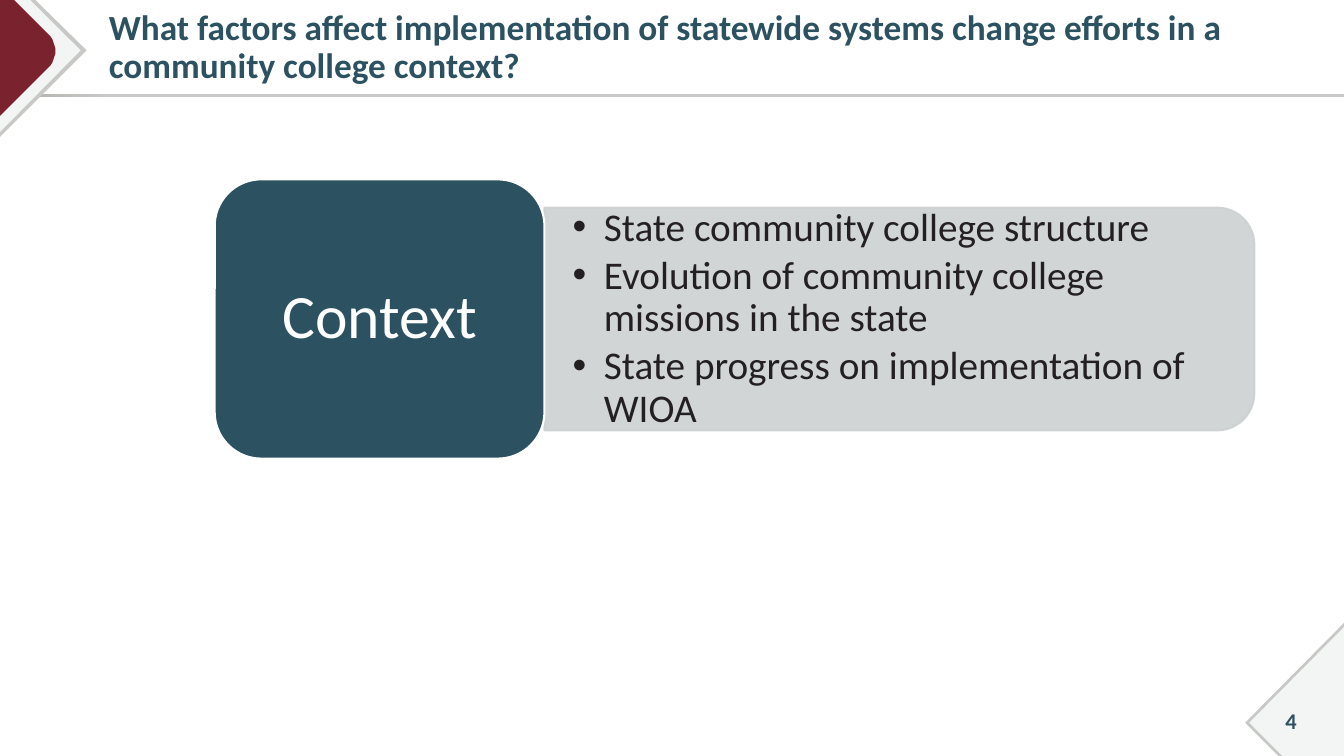
from lxml import etree
from pptx import Presentation
from pptx import util as u
from pptx.dml.color import RGBColor
from pptx.enum import shapes, text
from pptx.oxml import ns

PX = 9144  # EMU per px, 100 px to the inch
SLIDE_W, SLIDE_H = 1333, 750
FONT = "Calibri"
COLORS = {
    "teal": "2C5261", "maroon": "7A232F", "edge": "C8C8C6", "edge_dark": "ABABA8",
    "pale": "F3F4F4", "panel": "CDD1D2", "ink": "242021", "white": "FFFFFF",
}
TITLE = ("What factors affect implementation of statewide systems change "
         "efforts in a community college context?")
FACTORS = [
    "State community college structure",
    "Evolution of community college missions in the state",
    "State progress on implementation of WIOA",
]


def rgb(name):
    return RGBColor.from_string(COLORS[name])


def px(*lengths):
    return [u.Emu(round(length * PX)) for length in lengths]


def place(shape, box):
    shape.left, shape.top, shape.width, shape.height = px(*box)


def paint(shape, fill, line=None):
    shape.shadow.inherit = False
    shape.fill.solid()
    shape.fill.fore_color.rgb = rgb(fill)
    if line:
        shape.line.color.rgb = rgb(line)
        shape.line.width = u.Pt(1.5)
    else:
        shape.line.fill.background()


def set_alpha(shape, percent):
    for color in shape.element.spPr.iter(ns.qn("a:srgbClr")):
        etree.SubElement(color, ns.qn("a:alpha"), val=str(percent * 1000))


def write(shape, paragraphs, size, color, bold=False, align=text.PP_ALIGN.LEFT,
          margins=(10, 5, 10, 5), spacing=0.9, after=0, hang=0):
    """Fill a shape with text; a hang in px turns the paragraphs into bullets."""
    frame = shape.text_frame
    frame.word_wrap = True
    frame.auto_size = text.MSO_AUTO_SIZE.NONE
    frame.vertical_anchor = text.MSO_ANCHOR.MIDDLE
    (frame.margin_left, frame.margin_top,
     frame.margin_right, frame.margin_bottom) = px(*margins)
    frame.text = "\n".join(paragraphs)
    for paragraph in frame.paragraphs:
        paragraph.alignment = align
        paragraph.line_spacing = spacing
        paragraph.space_before = u.Pt(0)
        paragraph.space_after = u.Pt(after)
        if hang:
            properties = paragraph.runs[0].font and paragraph._p.get_or_add_pPr()
            properties.set("marL", str(hang * PX))
            properties.set("indent", str(-hang * PX))
            etree.SubElement(properties, ns.qn("a:buChar"), char="•")
        font = paragraph.runs[0].font
        font.name, font.size, font.bold = FONT, u.Pt(size), bold
        font.color.rgb = rgb(color)


def add_outline(slide, points, fill):
    builder = slide.shapes.build_freeform(*points[0], scale=PX)
    builder.add_line_segments(points[1:], close=True)
    paint(builder.convert_to_shape(), fill)


def curve(start, first, second, end, steps=12):
    """Points along a cubic Bézier curve."""
    points = []
    for step in range(steps + 1):
        t = step / steps
        weights = ((1 - t) ** 3, 3 * t * (1 - t) ** 2, 3 * t * t * (1 - t), t ** 3)
        points.append(tuple(sum(w * p[axis] for w, p in zip(weights, (start, first, second, end)))
                            for axis in (0, 1)))
    return points


def add_number_corner(slide, number):
    for tip, top, foot, fill in ((1235, 618, 1268, "edge"), (1239, 622, 1272, "pale")):
        add_outline(slide, [(SLIDE_W, top), (SLIDE_W, SLIDE_H), (foot, SLIDE_H), (tip, 717)], fill)
    label = slide.shapes.add_textbox(*px(1245, 695, 71, 40))
    write(label, [number], 16, "teal", bold=True, align=text.PP_ALIGN.CENTER, spacing=1)


def add_header(slide, box):
    left, top, width, height = box
    rule = slide.shapes.add_shape(shapes.MSO_SHAPE.RECTANGLE, *px(left, top + height - 3, width, 3))
    paint(rule, "edge")
    rule.fill.gradient()
    rule.fill.gradient_angle = 0
    for stop, color, position in zip(rule.fill.gradient_stops, ("edge_dark", "edge"), (0, 0.08)):
        stop.color.rgb = rgb(color)
        stop.position = position

    for shoulder, tip, foot, fill in ((35, 86, 136, "edge"), (30, 80, 131, "pale")):
        add_outline(slide, [(left, top), (left + shoulder, top), (left + tip, top + 50),
                            (left, top + foot)], fill)
    rounded_tip = curve((48, 34), (57, 43), (57, 58), (48, 67))
    gem = [(0, 0), (14, 0), *rounded_tip, (0, 115)]
    add_outline(slide, [(left + x, top + y) for x, y in gem], "maroon")

    title = slide.shapes.title
    place(title, (left + 88, top + 5, 1212, 86))
    write(title, [TITLE], 25.2, "teal", bold=True, margins=(20, 5, 10, 5))


def add_factor_block(slide, box, heading, factors):
    left, top, width, height = box
    tile_width, panel_height = 327, 221
    panel_width = width - tile_width
    middle = top + height / 2
    center = left + tile_width + panel_width / 2
    panel = slide.shapes.add_shape(
        shapes.MSO_SHAPE.ROUND_2_SAME_RECTANGLE,
        *px(center - panel_height / 2, middle - panel_width / 2, panel_height, panel_width))
    panel.rotation = 90
    paint(panel, "panel", line="panel")
    set_alpha(panel, 90)

    body = slide.placeholders[1]
    place(body, (left + tile_width + 1, middle - 100, panel_width - 11, 200))
    slide.shapes.element.append(body.element)  # bring the list in front of its panel
    write(body, factors, 28, "ink", margins=(27, 14, 27, 14), after=4.2, hang=31)

    tile = slide.shapes.add_shape(shapes.MSO_SHAPE.ROUNDED_RECTANGLE,
                                  *px(left, top, tile_width, height))
    paint(tile, "teal", line="white")
    write(tile, [heading], 44, "white", align=text.PP_ALIGN.CENTER, margins=(18, 9, 18, 9))


def main():
    deck = Presentation()
    deck.slide_width, deck.slide_height = px(SLIDE_W, SLIDE_H)
    slide = deck.slides.add_slide(deck.slide_layouts[1])
    add_number_corner(slide, "4")
    add_header(slide, (0, 0, SLIDE_W, 96))
    add_factor_block(slide, (213, 178, 1031, 277), "Context", FACTORS)
    deck.save("out.pptx")


if __name__ == "__main__":
    main()
